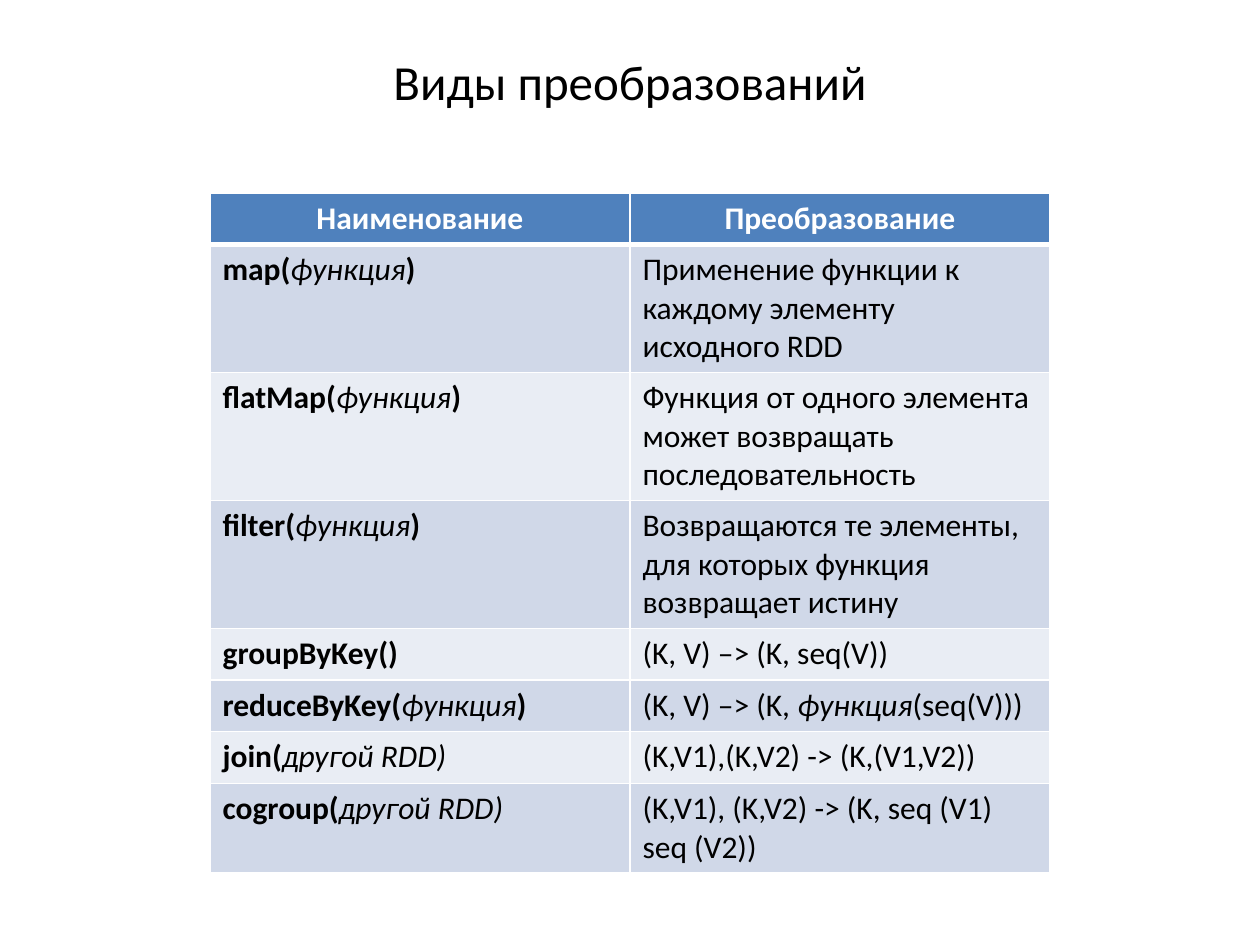
from lxml.etree import SubElement
from pptx import Presentation
from pptx.dml.color import RGBColor
from pptx.enum.text import MSO_ANCHOR, PP_ALIGN
from pptx.oxml.ns import qn
from pptx.util import Inches, Pt

HUES = {"head": "4F81BD", "odd": "D0D8E8", "even": "E9EDF4",
        "white": "FFFFFF", "black": "000000"}
STYLES = {"b": {"bold": True, "italic": False},
          "i": {"bold": False, "italic": True},
          "n": {"bold": False, "italic": False}}

# Each cell is a list of (text, style) runs
ROWS = [
    ([("Наименование", "b")], [("Преобразование", "b")]),
    ([("map(", "b"), ("функция", "i"), (")", "b")],
     [("Применение функции к каждому элементу исходного RDD", "n")]),
    ([("flatMap(", "b"), ("функция", "i"), (")", "b")],
     [("Функция от одного элемента может возвращать последовательность", "n")]),
    ([("filter(", "b"), ("функция", "i"), (")", "b")],
     [("Возвращаются те элементы, для которых функция возвращает истину", "n")]),
    ([("groupByKey()", "b")], [("(K, V) –> (K, seq(V))", "n")]),
    ([("reduceByKey(", "b"), ("функция", "i"), (")", "b")],
     [("(K, V) –> (K, ", "n"), ("функция", "i"), ("(seq(V)))", "n")]),
    ([("join(", "b"), ("другой RDD)", "i")],
     [("(K,V1),(K,V2) -> (K,(V1,V2))", "n")]),
    ([("cogroup(", "b"), ("другой RDD)", "i")],
     [("(K,V1), (K,V2) -> (K, seq (V1) seq (V2))", "n")]),
]


def write(par, text, size, hue, style):
    run = par.add_run()
    run.text = text
    looks = {"name": "Calibri", "size": Pt(size), **STYLES[style]}
    for key, value in looks.items():
        setattr(run.font, key, value)
    run.font.color.rgb = RGBColor.from_string(HUES[hue])


def edge(cell, widths):
    props = cell._tc.get_or_add_tcPr()
    for spot, (side, width) in enumerate(widths.items()):
        line = SubElement(props, qn("a:" + side), w=str(Pt(width)))
        fill = SubElement(line, qn("a:solidFill"))
        SubElement(fill, qn("a:srgbClr"), val=HUES["white"])
        props.remove(line)
        props.insert(spot, line)  # borders come before the fill


deck = Presentation()
deck.slide_width, deck.slide_height = Inches(10), Inches(7.5)
wide, high = deck.slide_width, deck.slide_height
slide = deck.slides.add_slide(deck.slide_layouts[5])

# Title
title = slide.shapes.title
place = {"left": wide * 0.05, "top": high * 0.04,
         "width": wide * 0.9, "height": high * 0.092}
for key, value in place.items():
    setattr(title, key, int(value))
frame = title.text_frame
frame.vertical_anchor = MSO_ANCHOR.MIDDLE
frame.paragraphs[0].alignment = PP_ALIGN.CENTER
write(frame.paragraphs[0], "Виды преобразований", 28, "black", "n")

# Table: two equal columns over the middle two thirds of the slide
step = Inches(0.41)
table = slide.shapes.add_table(
    len(ROWS), 2, wide // 6, Inches(1.53), wide * 2 // 3, step * len(ROWS)).table

for r, row in enumerate(ROWS):
    table.rows[r].height = step
    band = "head" if r == 0 else ("odd" if r % 2 else "even")
    for c, runs in enumerate(row):
        cell = table.cell(r, c)
        cell.fill.solid()
        cell.fill.fore_color.rgb = RGBColor.from_string(HUES[band])
        edge(cell, {"lnL": 1, "lnR": 1, "lnT": 3 if r == 1 else 1,
                    "lnB": 3 if r == 0 else 1})
        par = cell.text_frame.paragraphs[0]
        par.alignment = PP_ALIGN.LEFT if r else PP_ALIGN.CENTER
        for text, style in runs:
            write(par, text, 18, "black" if r else "white", style)

deck.save("out.pptx")
